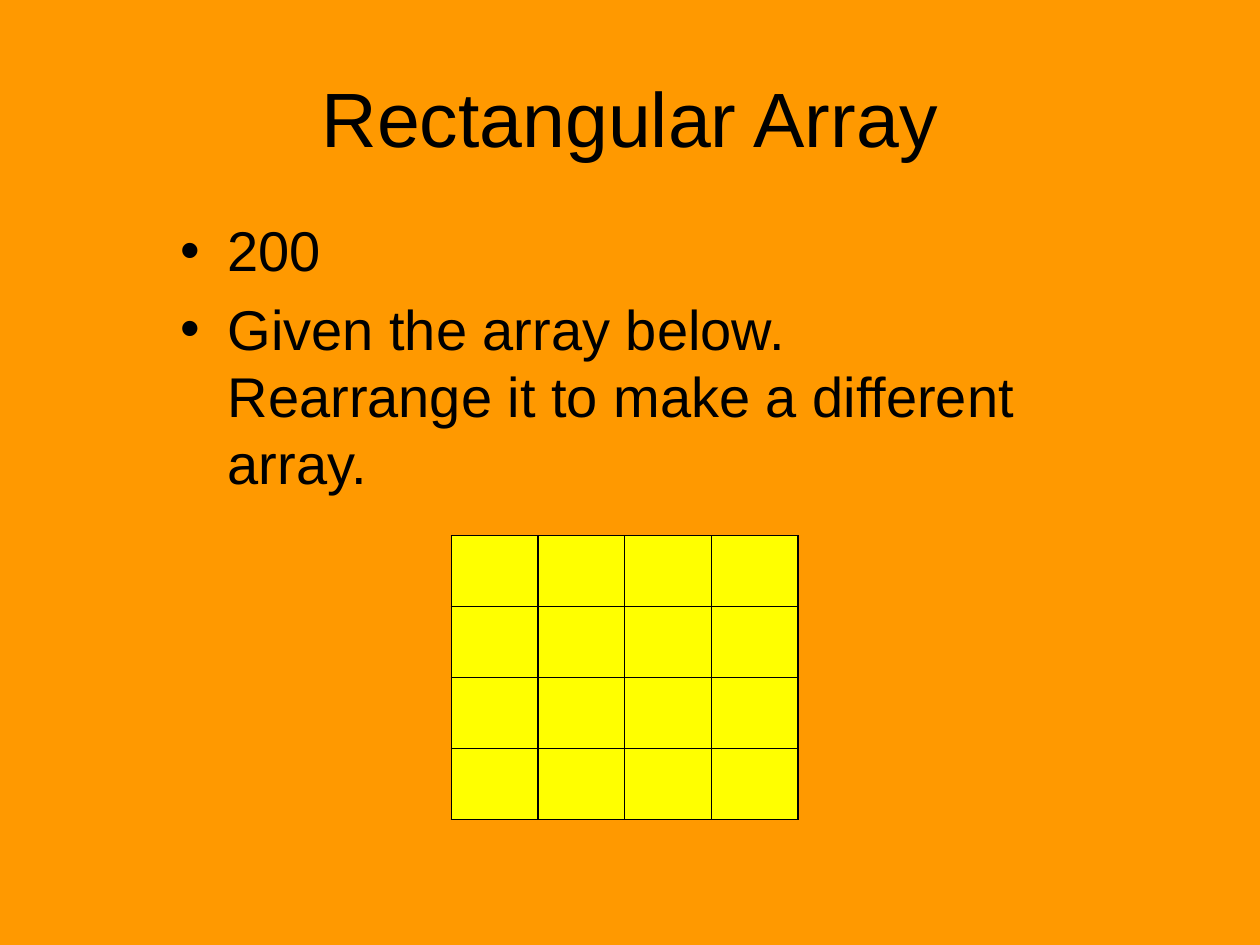
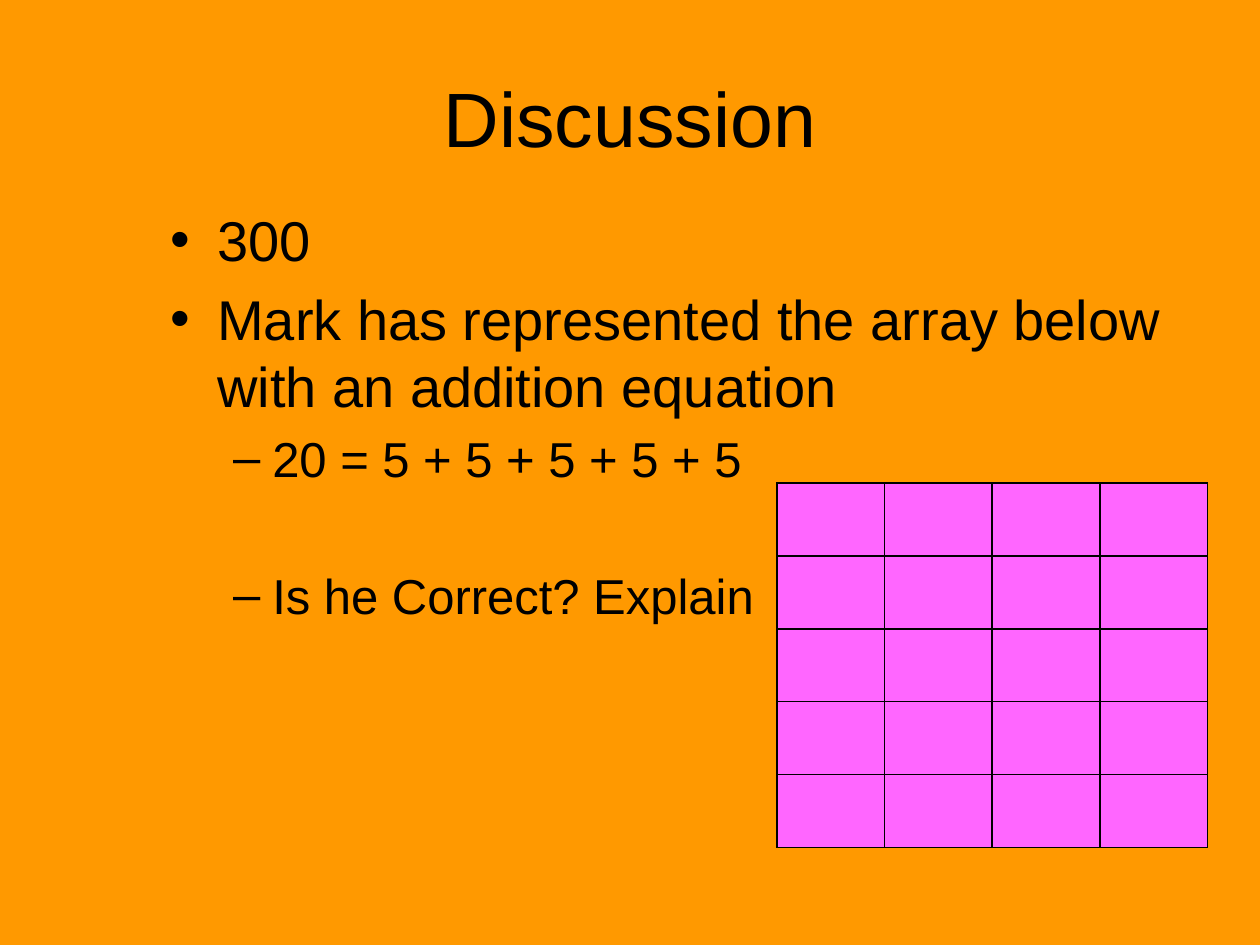
from dataclasses import dataclass

import pptx
import pptx.dml.color
import pptx.enum.text
import pptx.oxml
import pptx.oxml.ns
import pptx.util
from pptx.util import Cm


@dataclass(frozen=True)
class Theme:
    font: str = "Arial"
    background: str = "FF9900"
    ink: str = "000000"
    yellow: str = "FFFF00"
    pink: str = "FF66FF"
    title_size: int = 44
    body_sizes: tuple[int, ...] = (32, 28)
    border_width: int = 1


@dataclass(frozen=True)
class Box:
    left: float
    top: float
    width: float
    height: float

    def lengths(self) -> tuple[Cm, Cm, Cm, Cm]:
        return Cm(self.left), Cm(self.top), Cm(self.width), Cm(self.height)


@dataclass(frozen=True)
class BulletStyle:
    character: str
    margin: float
    hanging: float


@dataclass(frozen=True)
class Bullet:
    text: str
    level: int = 0
    space_before: float = 0.2


@dataclass(frozen=True)
class ArrayGrid:
    box: Box
    rows: int
    columns: int
    fill: str


@dataclass(frozen=True)
class Question:
    title: str
    body_box: Box
    bullets: tuple[Bullet, ...]
    grid: ArrayGrid


THEME = Theme()
TITLE_BOX = Box(1.27, 0.76, 22.86, 3.18)
BULLET_STYLES = (BulletStyle("•", 0.95, 0.95), BulletStyle("–", 2.06, 0.79))

QUESTIONS = (
    Question(
        "Rectangular Array",
        Box(3.39, 4.23, 17.78, 12.57),
        (
            Bullet("200"),
            Bullet("Given the array below. Rearrange it to make a different array."),
        ),
        ArrayGrid(Box(9.1, 10.8, 6.99, 5.72), 4, 4, THEME.yellow),
    ),
    Question(
        "Discussion",
        Box(3.18, 4.02, 20.96, 12.57),
        (
            Bullet("300"),
            Bullet("Mark has represented the array below with an addition equation"),
            Bullet("20 = 5 + 5 + 5 + 5 + 5", level=1),
            Bullet("Is he Correct? Explain", level=1, space_before=1.6),
        ),
        ArrayGrid(Box(15.66, 9.74, 8.68, 7.34), 5, 4, THEME.pink),
    ),
)


def rgb(colour: str) -> pptx.dml.color.RGBColor:
    return pptx.dml.color.RGBColor.from_string(colour)


def format_runs(paragraph, size: int) -> None:
    for run in paragraph.runs:
        run.font.name = THEME.font
        run.font.size = pptx.util.Pt(size)
        run.font.color.rgb = rgb(THEME.ink)


def set_title(slide, text: str) -> None:
    title = slide.shapes.title
    title.left, title.top, title.width, title.height = TITLE_BOX.lengths()
    text_frame = title.text_frame
    text_frame.text = text
    text_frame.vertical_anchor = pptx.enum.text.MSO_ANCHOR.MIDDLE
    paragraph = text_frame.paragraphs[0]
    paragraph.alignment = pptx.enum.text.PP_ALIGN.CENTER
    format_runs(paragraph, THEME.title_size)


def format_bullet(paragraph, bullet: Bullet) -> None:
    style = BULLET_STYLES[bullet.level]
    size = THEME.body_sizes[bullet.level]
    paragraph.level = bullet.level
    paragraph.space_before = pptx.util.Pt(size * bullet.space_before)
    format_runs(paragraph, size)
    properties = paragraph._p.get_or_add_pPr()
    properties.set("marL", str(Cm(style.margin)))
    properties.set("indent", str(-Cm(style.hanging)))
    for tag, attribute, value in (
        ("a:buFont", "typeface", THEME.font),
        ("a:buChar", "char", style.character),
    ):
        element = pptx.oxml.parse_xml(
            f'<{tag} {pptx.oxml.ns.nsdecls("a")} {attribute}="{value}"/>'
        )
        properties.append(element)


def add_bullets(slide, box: Box, bullets: tuple[Bullet, ...]) -> None:
    text_frame = slide.shapes.add_textbox(*box.lengths()).text_frame
    text_frame.word_wrap = True
    text_frame.text = "\n".join(bullet.text for bullet in bullets)
    for paragraph, bullet in zip(text_frame.paragraphs, bullets):
        format_bullet(paragraph, bullet)


def add_borders(cell) -> None:
    properties = cell._tc.get_or_add_tcPr()
    width = pptx.util.Pt(THEME.border_width)
    for index, side in enumerate(("lnL", "lnR", "lnT", "lnB")):
        border = pptx.oxml.parse_xml(
            f'<a:{side} {pptx.oxml.ns.nsdecls("a")} w="{width}"><a:solidFill>'
            f'<a:srgbClr val="{THEME.ink}"/></a:solidFill></a:{side}>'
        )
        properties.insert(index, border)


def add_array(slide, grid: ArrayGrid) -> None:
    frame = slide.shapes.add_table(grid.rows, grid.columns, *grid.box.lengths())
    table = frame.table
    table.first_row = False
    table.horz_banding = False
    for cell in table.iter_cells():
        cell.fill.solid()
        cell.fill.fore_color.rgb = rgb(grid.fill)
        add_borders(cell)


def add_question(presentation, question: Question) -> None:
    layout = presentation.slide_layouts.get_by_name("Title Only")
    slide = presentation.slides.add_slide(layout)
    set_title(slide, question.title)
    add_bullets(slide, question.body_box, question.bullets)
    add_array(slide, question.grid)


def main() -> None:
    presentation = pptx.Presentation()
    presentation.slide_width = Cm(25.4)
    presentation.slide_height = Cm(19.05)
    background = presentation.slide_master.background.fill
    background.solid()
    background.fore_color.rgb = rgb(THEME.background)
    for question in QUESTIONS:
        add_question(presentation, question)
    presentation.save("out.pptx")


if __name__ == "__main__":
    main()
